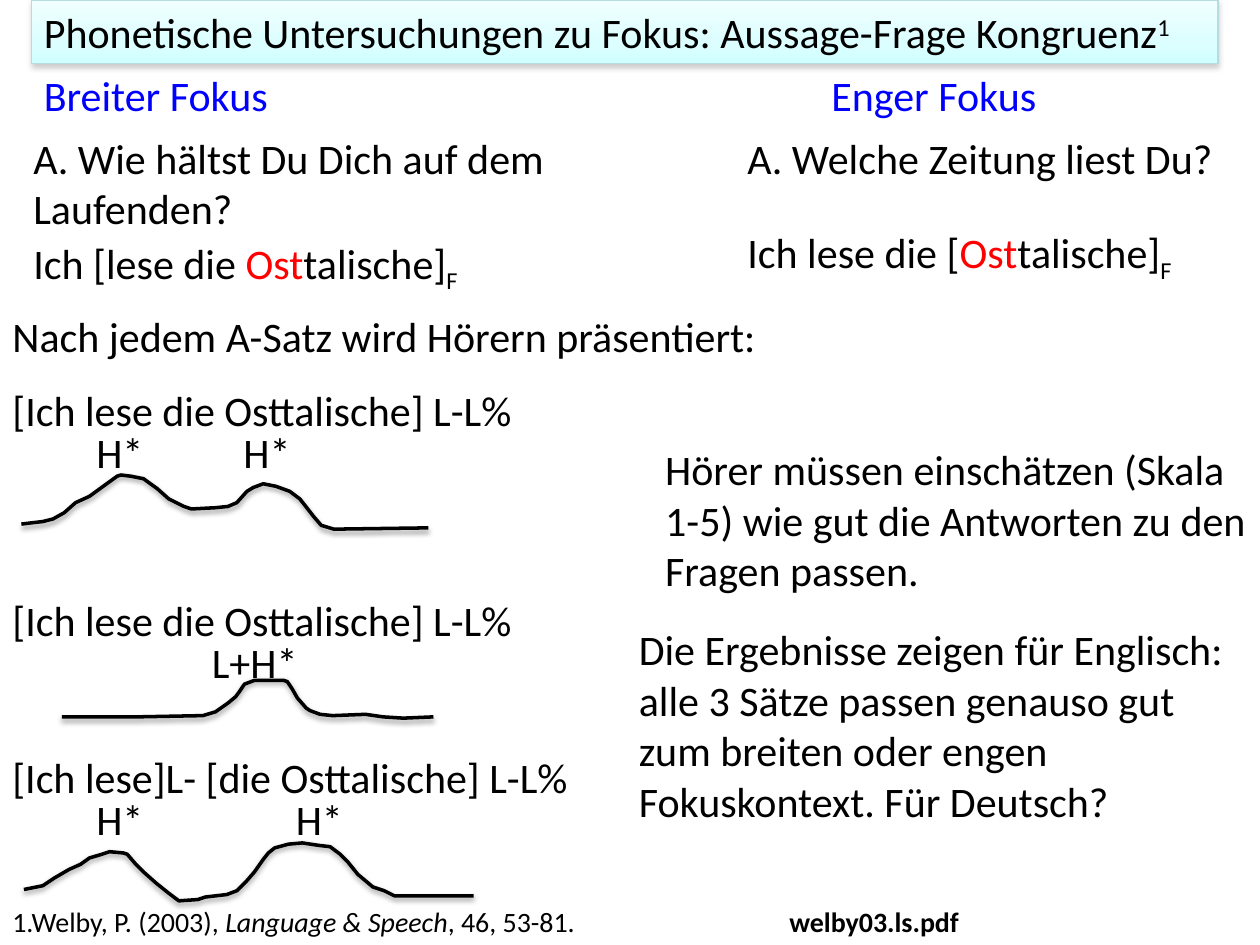
from copy import deepcopy
from pptx import Presentation
from pptx.dml.color import RGBColor
from pptx.enum.shapes import MSO_SHAPE
from pptx.enum.text import PP_ALIGN
from pptx.oxml import parse_xml
from pptx.oxml.ns import nsdecls, qn
from pptx.util import Pt

COLORS = {"black": "000000", "blue": "0000FF", "red": "FF0000", "edge": "B6DCDF",
          "top": "F0FFFF", "mid": "DDFEFF", "base": "CFFFFF"}
RGB = {name: RGBColor.from_string(code) for name, code in COLORS.items()}
SHIFT = {"sub": "-25000", "super": "30000"}


def write(shape, runs, size=24, color="black"):
    frame = shape.text_frame
    frame.word_wrap = True
    para = frame.paragraphs[0]
    para.alignment = PP_ALIGN.LEFT
    para.font.name = "Calibri"
    para.font.size = Pt(size)
    para.font.color.rgb = RGB[color]
    for text, style in runs:
        run = para.add_run()
        run.text = text
        if style == "red":
            run.font.color.rgb = RGB["red"]
        elif style == "bold":
            run.font.bold = True
        elif style == "italic":
            run.font.italic = True
        elif style in SHIFT:
            run._r.get_or_add_rPr().set("baseline", SHIFT[style])


def shade(shape, tint):
    shape.shadow.inherit = False
    shape._element.spPr.find(qn("a:effectLst")).append(parse_xml(
        f'<a:outerShdw {nsdecls("a")} blurRad="{Pt(3.1)}" dist="{Pt(1.6)}" dir="5400000" '
        f'rotWithShape="0"><a:srgbClr val="{tint}"><a:alpha val="38000"/>'
        '</a:srgbClr></a:outerShdw>'))


deck = Presentation()
deck.slide_width, deck.slide_height = Pt(720), Pt(540)
shapes = deck.slides.add_slide(deck.slide_layouts[6]).shapes

title = shapes.add_shape(MSO_SHAPE.RECTANGLE, Pt(18), Pt(0), Pt(678), Pt(36.4))
title.fill.gradient()
title.fill.gradient_angle = 270
stops = title._element.spPr.find(qn("a:gradFill")).find(qn("a:gsLst"))
stops.insert(1, deepcopy(stops[0]))
for stop, name, place in zip(title.fill.gradient_stops, ("top", "mid", "base"), (0, 0.65, 1)):
    stop.color.rgb = RGB[name]
    stop.position = place
title.line.color.rgb = RGB["edge"]
title.line.width = Pt(0.75)
shade(title, "808080")
write(title, [("Phonetische Untersuchungen zu Fokus: Aussage-Frage Kongruenz", ""), ("1", "super")])

same = "[Ich lese die Osttalische] L-L%"
paper = [("Ost", "red"), ("talische]", ""), ("F", "sub")]
body = [
    (12, 72, 336, 65.5, [("A. Wie hältst Du Dich auf dem Laufenden?", "")]),
    (420, 72, 300, 36.4, [("A. Welche Zeitung liest Du?", "")]),
    (12, 132, 279, 36.4, [("Ich [lese die ", "")] + paper),
    (420, 126, 279, 36.4, [("Ich lese die [", "")] + paper),
    (0, 174, 456, 36.4, [("Nach jedem A-Satz wird Hörern präsentiert:", "")]),
    (0, 216, 336, 36.4, [(same, "")]),
    (0, 336, 342, 36.4, [(same, "")]),
    (0, 426, 354, 36.4, [("[Ich lese]L- [die Osttalische] L-L%", "")]),
    (48, 240, 42, 36.4, [("H*", "")]),
    (132, 240, 42, 36.4, [("H*", "")]),
    (114, 360, 72, 36.4, [("L+H*", "")]),
    (48, 450, 42, 36.4, [("H*", "")]),
    (162, 450, 42, 36.4, [("H*", "")]),
    (373, 250, 348, 94.5, [("Hörer müssen einschätzen (Skala 1-5) wie gut die Antworten "
                            "zu den Fragen passen.", "")]),
    (358, 353, 354, 123.6, [("Die Ergebnisse zeigen für Englisch: alle 3 Sätze passen genauso "
                             "gut zum breiten oder engen Fokuskontext. Für Deutsch?", "")]),
]
heads = [(18, 36, 150, 36.4, [("Breiter Fokus", "")]),
         (468, 36, 150, 36.4, [("Enger Fokus", "")])]
notes = [(0, 513.4, 360, 26.6, [("1.Welby, P. (2003), ", ""), ("Language & Speech", "italic"),
                                (", 46, 53-81.", "")]),
         (444, 513.4, 126, 26.6, [("welby03.ls.pdf", "bold")])]
for group, size, color in ((body, 24, "black"), (heads, 24, "blue"), (notes, 16, "black")):
    for left, top, width, height, runs in group:
        box = shapes.add_textbox(Pt(left), Pt(top), Pt(width), Pt(height))
        write(box, runs, size, color)

curves = [
    [(17, 416), (25, 415), (34, 414), (42, 412), (51, 407), (60, 399), (71, 394), (82, 386),
     (93, 378), (96, 377), (104, 378), (114, 380), (125, 388), (134, 396), (146, 402),
     (152, 404), (171, 403), (181, 402), (188, 399), (196, 390), (201, 387), (209, 384),
     (219, 386), (230, 390), (238, 396), (242, 401), (249, 410), (255, 417), (265, 420),
     (340, 419)],
    [(49, 569), (109, 569), (161, 568), (171, 565), (181, 558), (187, 553), (190, 549),
     (194, 543), (202, 540), (206, 540), (225, 540), (228, 541), (232, 547), (236, 554),
     (243, 562), (246, 564), (254, 567), (264, 568), (290, 567), (304, 569), (320, 570),
     (344, 569)],
    [(19, 706), (34, 703), (43, 697), (55, 690), (64, 686), (71, 681), (81, 678), (87, 676),
     (98, 677), (101, 678), (107, 685), (115, 693), (124, 701), (134, 709), (142, 715),
     (157, 714), (163, 712), (180, 710), (188, 707), (196, 699), (202, 692), (209, 682),
     (213, 677), (218, 673), (229, 670), (240, 669), (253, 671), (262, 672), (270, 678),
     (276, 684), (284, 694), (296, 704), (305, 707), (313, 711), (376, 711)],
]
for start, *rest in curves:
    path = shapes.build_freeform(*start, scale=Pt(0.72))
    path.add_line_segments(rest, close=False)
    curve = path.convert_to_shape()
    curve.fill.background()
    curve.line.color.rgb = RGB["black"]
    curve.line.width = Pt(2)
    shade(curve, COLORS["black"])

deck.save("out.pptx")
